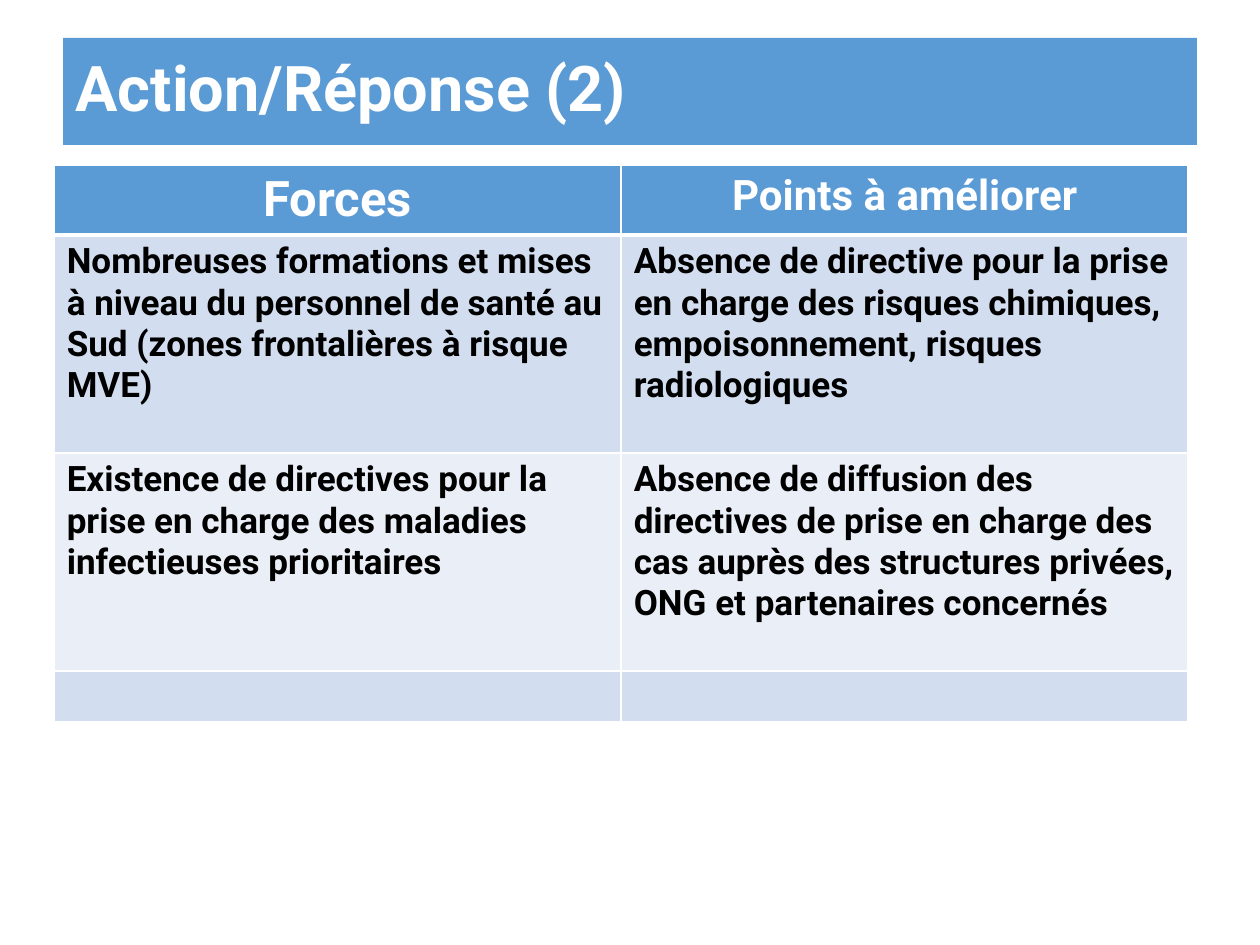
import pptx
import pptx.util
import pptx.dml.color
import pptx.enum.text
import pptx.oxml
import pptx.oxml.ns

Inches = pptx.util.Inches
RGB = pptx.dml.color.RGBColor
Align = pptx.enum.text.PP_ALIGN
Anchor = pptx.enum.text.MSO_ANCHOR

BLUE = RGB(0x5B, 0x9B, 0xD5)
PALE = RGB(0xD2, 0xDE, 0xEF)
LIGHT = RGB(0xEA, 0xEF, 0xF7)
WHITE = RGB(0xFF, 0xFF, 0xFF)
BLACK = RGB(0, 0, 0)
FONT = "Roboto"

HEADS = [("Forces", 28), ("Points à améliorer", 24)]
ROWS = [
    ("Nombreuses formations et mises à niveau du personnel de santé au Sud "
     "(zones frontalières à risque MVE)",
     "Absence de directive pour la prise en charge des risques chimiques, "
     "empoisonnement, risques radiologiques"),
    ("Existence de directives pour la prise en charge des maladies "
     "infectieuses prioritaires",
     "Absence de diffusion des directives de prise en charge des cas auprès "
     "des structures privées, ONG et partenaires concernés"),
    ("", ""),
]
HEIGHTS = [0.55, 1.73, 1.73, 0.4]


def write(frame, text, size=20, color=BLACK, align=Align.LEFT, space=1.0):
    para = frame.paragraphs[0]
    para.alignment = align
    para.line_spacing = space
    run = para.add_run()
    run.text = text
    font = run.font
    font.name, font.size, font.bold = FONT, pptx.util.Pt(size), True
    font.color.rgb = color


def paint(shape, color):
    shape.fill.solid()
    shape.fill.fore_color.rgb = color


def edge(cell, side, width):
    """Add one white border; call before the cell is filled."""
    line = pptx.oxml.parse_xml(
        f'<a:ln{side} {pptx.oxml.ns.nsdecls("a")} w="{pptx.util.Pt(width)}">'
        f'<a:solidFill><a:srgbClr val="{WHITE}"/></a:solidFill></a:ln{side}>')
    cell._tc.get_or_add_tcPr().append(line)


def add_title(slide, text):
    title = slide.shapes.title
    title.left, title.top = Inches(0.5), Inches(0.3)
    title.width, title.height = Inches(9), Inches(0.85)
    paint(title, BLUE)
    title.text_frame.vertical_anchor = Anchor.MIDDLE
    write(title.text_frame, text, size=36, color=WHITE, space=0.9)


def add_grid(slide):
    table = slide.shapes.add_table(
        len(HEIGHTS), len(HEADS), Inches(0.43), Inches(1.31),
        Inches(9), Inches(sum(HEIGHTS))).table
    for row, height in zip(table.rows, HEIGHTS):
        row.height = Inches(height)

    # Borders, with a thick rule under the header, then fills
    for r, row in enumerate(table.rows):
        for cell in row.cells:
            for side in "LRTB":
                thick = (r, side) in ((0, "B"), (1, "T"))
                edge(cell, side, 3 if thick else 1)
            paint(cell, BLUE if r == 0 else PALE if r % 2 else LIGHT)

    # Header and body text
    for c, (text, size) in enumerate(HEADS):
        write(table.cell(0, c).text_frame, text, size=size, color=WHITE,
              align=Align.CENTER)
    for r, texts in enumerate(ROWS, 1):
        for c, text in enumerate(texts):
            if text:
                write(table.cell(r, c).text_frame, text)


def main():
    deck = pptx.Presentation()
    deck.slide_width, deck.slide_height = Inches(10), Inches(7.5)
    slide = deck.slides.add_slide(deck.slide_layouts[5])
    add_title(slide, "Action/Réponse (2)")
    add_grid(slide)
    deck.save("out.pptx")


if __name__ == "__main__":
    main()
